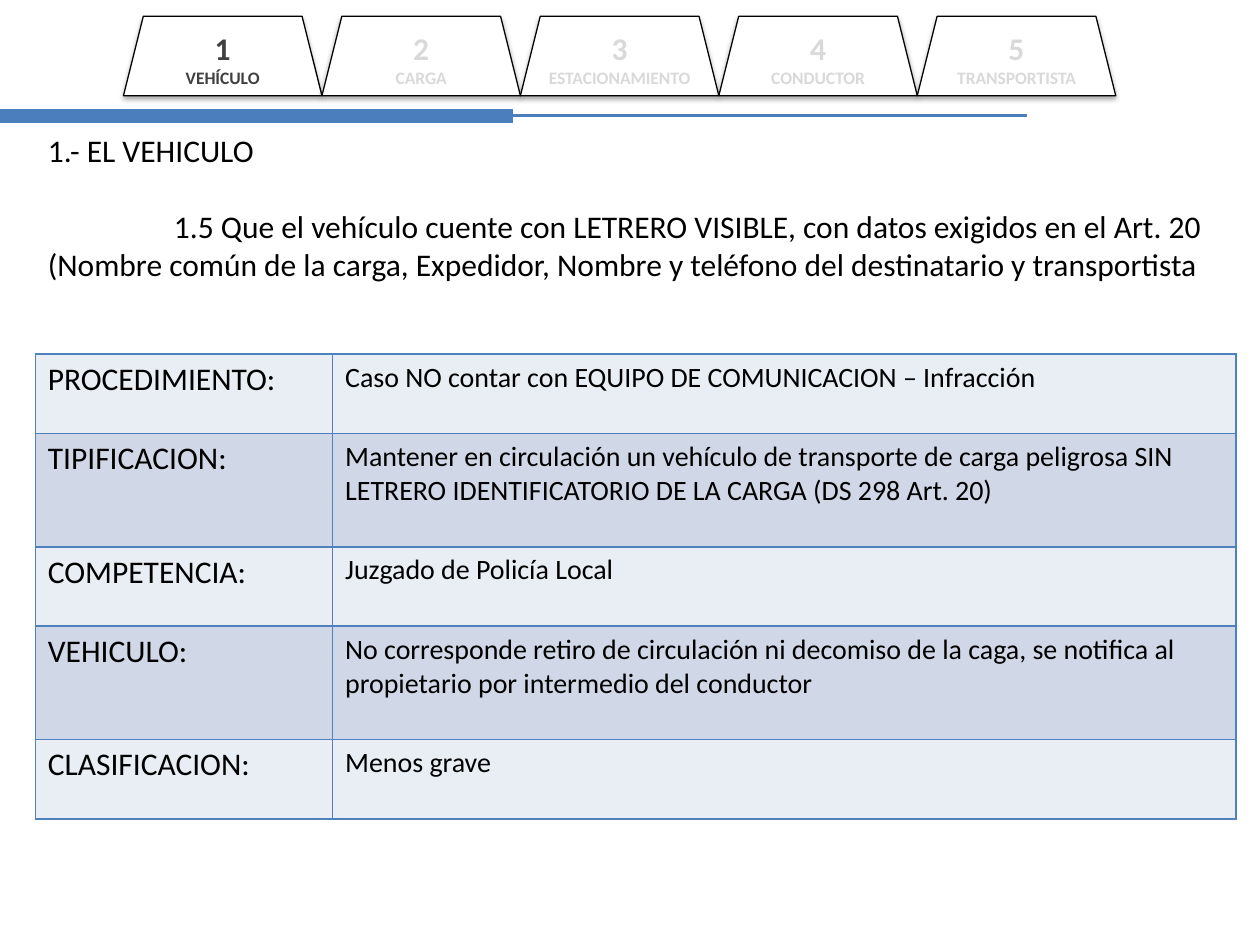
from dataclasses import dataclass

import pptx
import pptx.dml.color
import pptx.enum.shapes
import pptx.enum.text
import pptx.oxml
import pptx.oxml.ns
import pptx.util
from pptx.util import Inches

NS = pptx.oxml.ns.nsdecls("a")


@dataclass(frozen=True)
class Theme:
    font: str = "Calibri"
    ink: str = "000000"
    rule: str = "4B7EBC"
    border: str = "4F81BD"
    light: str = "E9EDF4"
    dark: str = "D0D8E8"
    paper: str = "FFFFFF"
    active: str = "404040"
    faded: str = "D9D9D9"
    large: float = 18
    medium: float = 16
    small: float = 10


@dataclass(frozen=True)
class Tab:
    number: int
    label: str
    active: bool = False


@dataclass(frozen=True)
class Entry:
    label: str
    text: str
    height: float


THEME = Theme()
TABS = [
    Tab(1, "VEHÍCULO", True),
    Tab(2, "CARGA"),
    Tab(3, "ESTACIONAMIENTO"),
    Tab(4, "CONDUCTOR"),
    Tab(5, "TRANSPORTISTA"),
]
ENTRIES = [
    Entry("PROCEDIMIENTO:",
          "Caso NO contar con EQUIPO DE COMUNICACION – Infracción", 0.63),
    Entry("TIPIFICACION:",
          "Mantener en circulación un vehículo de transporte de carga peligrosa "
          "SIN LETRERO IDENTIFICATORIO DE LA CARGA (DS 298 Art. 20)", 0.9),
    Entry("COMPETENCIA:", "Juzgado de Policía Local", 0.63),
    Entry("VEHICULO:",
          "No corresponde retiro de circulación ni decomiso de la caga, se "
          "notifica al propietario por intermedio del conductor", 0.9),
    Entry("CLASIFICACION:", "Menos grave", 0.63),
]
HEADING = "1.- EL VEHICULO"
POINT = ("1.5 Que el vehículo cuente con LETRERO VISIBLE, con datos exigidos en "
         "el Art. 20 (Nombre común de la carga, Expedidor, Nombre y teléfono del "
         "destinatario y transportista")


def color(code: str) -> pptx.dml.color.RGBColor:
    return pptx.dml.color.RGBColor.from_string(code)


def style(para, size: float, code: str = THEME.ink, bold: bool = False) -> None:
    for run in para.runs:
        run.font.name = THEME.font
        run.font.size = pptx.util.Pt(size)
        run.font.bold = bold
        run.font.color.rgb = color(code)


def draw_rule(slide, length: float, width: float) -> None:
    top = Inches(0.92)
    line = slide.shapes.add_connector(
        pptx.enum.shapes.MSO_CONNECTOR.STRAIGHT, 0, top, Inches(length), top)
    line.line.color.rgb = color(THEME.rule)
    line.line.width = pptx.util.Pt(width)
    line._element.spPr.append(pptx.oxml.parse_xml(f"<a:effectLst {NS}/>"))


def draw_title(slide) -> None:
    title = slide.shapes.title
    title.left, title.top = Inches(0.28), Inches(0.99)
    title.width, title.height = Inches(9.61), Inches(1.31)
    frame = title.text_frame
    frame.text = f"{HEADING}\n{POINT}"
    frame.word_wrap = True
    frame.auto_size = pptx.enum.text.MSO_AUTO_SIZE.NONE
    frame.vertical_anchor = pptx.enum.text.MSO_ANCHOR.TOP
    for para in frame.paragraphs:
        para.alignment = pptx.enum.text.PP_ALIGN.LEFT
        style(para, THEME.large)
    point = frame.paragraphs[1]
    point.space_before = pptx.util.Pt(22)
    props = point._p.get_or_add_pPr()
    props.set("marL", "0")
    props.set("indent", str(Inches(1)))


def draw_border(cell) -> None:
    props = cell._tc.get_or_add_tcPr()
    for spot, side in enumerate(("lnL", "lnR", "lnT", "lnB")):
        props.insert(spot, pptx.oxml.parse_xml(
            f'<a:{side} {NS} w="12700"><a:solidFill>'
            f'<a:srgbClr val="{THEME.border}"/></a:solidFill></a:{side}>'))


def draw_table(slide, entries: list[Entry]) -> None:
    widths = (2.36, 7.17)
    height = sum(entry.height for entry in entries)
    table = slide.shapes.add_table(
        len(entries), len(widths), Inches(0.28), Inches(2.81),
        Inches(sum(widths)), Inches(height)).table
    table.first_row = False
    for column, width in zip(table.columns, widths):
        column.width = Inches(width)
    for index, entry in enumerate(entries):
        row = table.rows[index]
        row.height = Inches(entry.height)
        texts = (entry.label, entry.text)
        sizes = (THEME.large, THEME.medium)
        for cell, text, size in zip(row.cells, texts, sizes):
            cell.text_frame.text = text
            style(cell.text_frame.paragraphs[0], size)
            cell.fill.solid()
            cell.fill.fore_color.rgb = color(
                THEME.dark if index % 2 else THEME.light)
            draw_border(cell)


def add_shadow(shape) -> None:
    """Give the shape a soft shadow that falls straight down."""
    shape.shadow.inherit = False
    effects = shape._element.spPr.find(pptx.oxml.ns.qn("a:effectLst"))
    effects.append(pptx.oxml.parse_xml(
        f'<a:outerShdw {NS} blurRad="{pptx.util.Pt(3.1)}" '
        f'dist="{pptx.util.Pt(1.8)}" dir="5400000" rotWithShape="0">'
        f'<a:srgbClr val="{THEME.ink}"><a:alpha val="35000"/></a:srgbClr>'
        "</a:outerShdw>"))


def draw_tab(slide, tab: Tab) -> None:
    width = 1.575
    shape = slide.shapes.add_shape(
        pptx.enum.shapes.MSO_SHAPE.TRAPEZOID,
        Inches(0.98 + (tab.number - 1) * width), Inches(0.13),
        Inches(width), Inches(0.63))
    shape.fill.solid()
    shape.fill.fore_color.rgb = color(THEME.paper)
    shape.line.color.rgb = color(THEME.ink)
    shape.line.width = pptx.util.Pt(0.75)
    add_shadow(shape)
    frame = shape.text_frame
    frame.text = f"{tab.number}\n{tab.label}"
    frame.vertical_anchor = pptx.enum.text.MSO_ANCHOR.MIDDLE
    for para, size in zip(frame.paragraphs, (THEME.large, THEME.small)):
        para.alignment = pptx.enum.text.PP_ALIGN.CENTER
        style(para, size, THEME.active if tab.active else THEME.faded, True)


def main() -> None:
    deck = pptx.Presentation()
    deck.slide_width, deck.slide_height = Inches(10), Inches(7.5)
    slide = deck.slides.add_slide(deck.slide_layouts.get_by_name("Title Only"))
    draw_rule(slide, 8.15, 1.75)
    draw_rule(slide, 4.07, 8)
    draw_title(slide)
    draw_table(slide, ENTRIES)
    for tab in TABS:
        draw_tab(slide, tab)
    deck.save("out.pptx")


if __name__ == "__main__":
    main()
